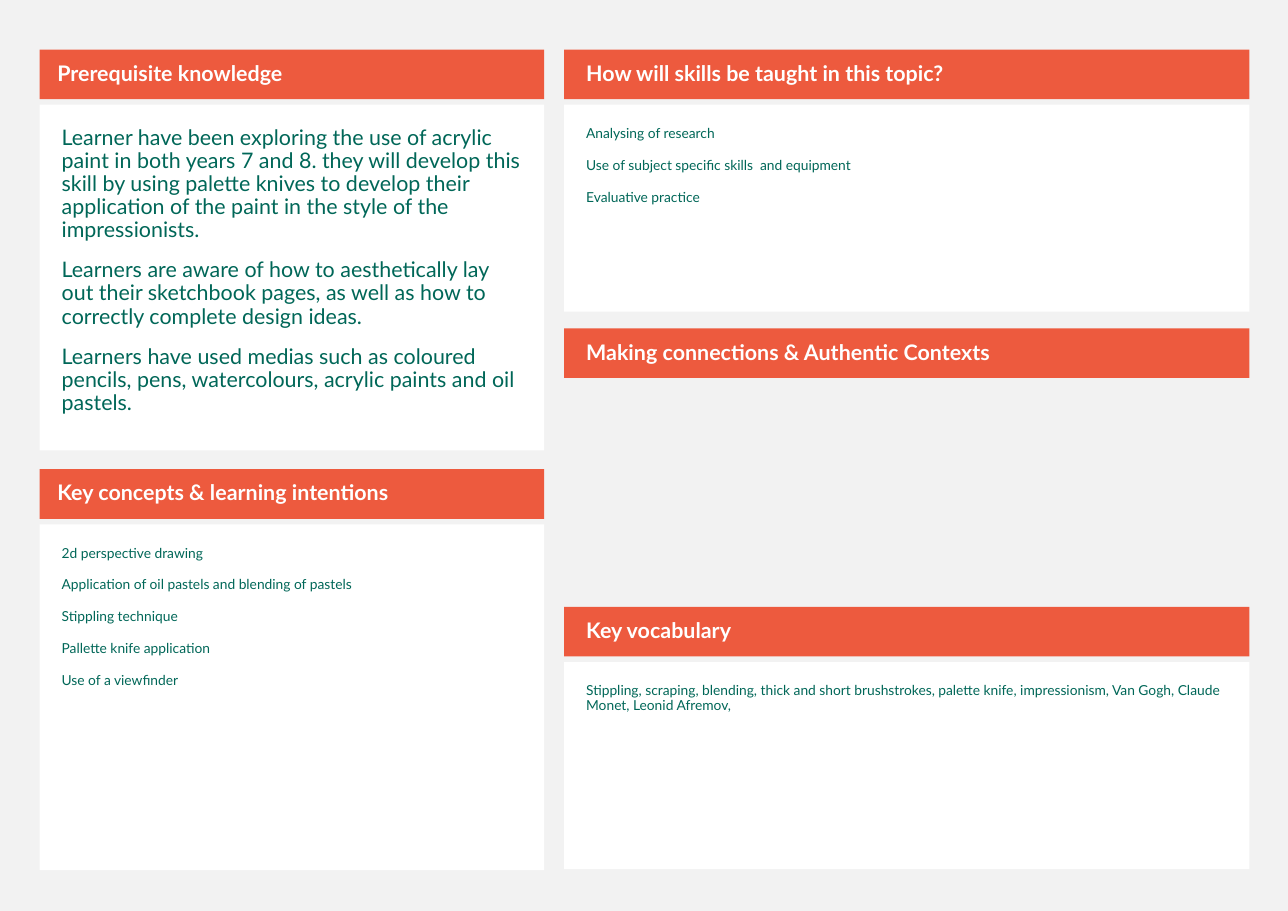
"""Build a topic overview slide of titled panels in two columns."""
from pptx import Presentation
from pptx.dml.color import RGBColor
from pptx.enum.shapes import MSO_SHAPE as Shape
from pptx.enum.text import MSO_ANCHOR as Anchor, PP_ALIGN as Align
from pptx.util import Inches, Pt

GREY = RGBColor(0xF2, 0xF2, 0xF2)
WHITE = RGBColor(0xFF, 0xFF, 0xFF)
ORANGE = RGBColor(0xED, 0x5A, 0x3E)
GREEN = RGBColor(0x00, 0x67, 0x58)

HEADER_HEIGHT = 0.45
BODY_OFFSET = 0.5
FIRST_ROW = 0.45

presentation = Presentation()
presentation.slide_width = Inches(11.69)
presentation.slide_height = Inches(8.27)
slide = presentation.slides.add_slide(presentation.slide_layouts[6])
slide.background.fill.solid()
slide.background.fill.fore_color.rgb = GREY


def add_box(paragraphs, *, box, fill, color, size, margins, bold=False, anchor=Anchor.TOP):
    shape = slide.shapes.add_shape(Shape.RECTANGLE, *map(Inches, box))
    shape.shadow.inherit = False
    shape.fill.solid()
    shape.fill.fore_color.rgb = fill
    shape.line.fill.background()
    frame = shape.text_frame
    frame.word_wrap = True
    frame.vertical_anchor = anchor
    frame.margin_left, frame.margin_top, frame.margin_right, frame.margin_bottom = map(Inches, margins)
    for index, text in enumerate(paragraphs):
        paragraph = frame.paragraphs[0] if index == 0 else frame.add_paragraph()
        paragraph.alignment = Align.LEFT
        paragraph.line_spacing = 0.9
        paragraph.space_before = Pt(11)
        run = paragraph.add_run()
        run.text = text
        run.font.name = "Lato"
        run.font.size = Pt(size)
        run.font.bold = bold
        run.font.color.rgb = color


left_panels = [
    ("Prerequisite knowledge", 14, [
        "Learner have been exploring the use of acrylic paint in both years 7 and 8. they will "
        "develop this skill by using palette knives to develop their application of the paint "
        "in the style of the impressionists.",
        "Learners are aware of how to aesthetically lay out their sketchbook pages, as well as "
        "how to correctly complete design ideas.",
        "Learners have used medias such as coloured pencils, pens, watercolours, acrylic paints "
        "and oil pastels.",
    ]),
    ("Key concepts & learning intentions", 9, [
        "2d perspective drawing",
        "Application of oil pastels and blending of pastels",
        "Stippling technique",
        "Pallette knife application",
        "Use of a viewfinder",
    ]),
]
right_panels = [
    ("How will skills be taught in this topic?", 9, [
        "Analysing of research",
        "Use of subject specific skills  and equipment",
        "Evaluative practice",
    ]),
    ("Making connections & Authentic Contexts", 9, []),
    ("Key vocabulary", 9, [
        "Stippling, scraping, blending, thick and short brushstrokes, palette knife, "
        "impressionism, Van Gogh, Claude Monet, Leonid Afremov,",
    ]),
]
columns = [
    (0.36, 4.58, 3.81, 3.14, 0.16, left_panels),
    (5.12, 6.22, 2.53, 1.88, 0.2, right_panels),
]

for left, width, row_step, body_height, header_indent, panels in columns:
    for row, (title, body_size, body) in enumerate(panels):
        top = FIRST_ROW + row * row_step
        add_box([title], box=(left, top, width, HEADER_HEIGHT), fill=ORANGE, color=WHITE,
                size=14, margins=(header_indent, 0.05, 0.1, 0.05), bold=True, anchor=Anchor.MIDDLE)
        if body:
            add_box(body, box=(left, top + BODY_OFFSET, width, body_height), fill=WHITE,
                    color=GREEN, size=body_size, margins=(0.2, 0.2, 0.2, 0.2))

presentation.save("out.pptx")
